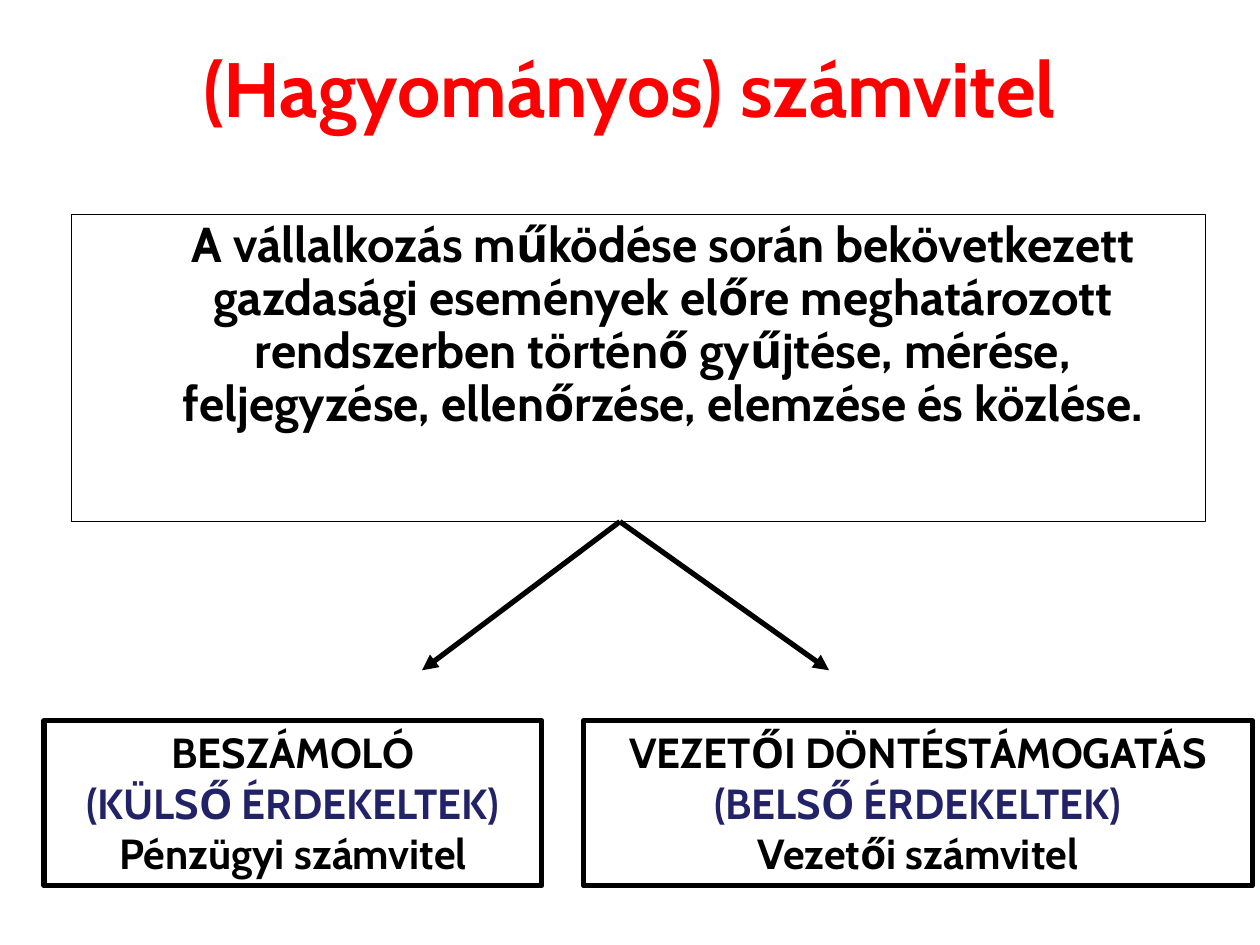
from lxml import etree
from pptx import Presentation
from pptx.dml.color import RGBColor
from pptx.enum.shapes import MSO_CONNECTOR
from pptx.enum.text import MSO_ANCHOR, MSO_AUTO_SIZE, PP_ALIGN
from pptx.oxml.ns import qn
from pptx.util import Inches, Pt

LINE = MSO_CONNECTOR.STRAIGHT
TOP, MIDDLE = MSO_ANCHOR.TOP, MSO_ANCHOR.MIDDLE
FIXED, GROW = MSO_AUTO_SIZE.NONE, MSO_AUTO_SIZE.SHAPE_TO_FIT_TEXT
CENTER = PP_ALIGN.CENTER

BLACK = RGBColor(0, 0, 0)
RED = RGBColor(255, 0, 0)
NAVY = RGBColor(0x22, 0x22, 0x68)


def apply(item, values):
    for name, value in values.items():
        setattr(item, name, value)


def place(shape, box):
    names = ("left", "top", "width", "height")
    apply(shape, dict(zip(names, map(Inches, box))))


def outline(shape, width):
    shape.line.color.rgb = BLACK
    shape.line.width = Pt(width)


def write(para, text, size, color):
    para.alignment = CENTER
    run = para.add_run()
    run.text = text
    apply(run.font, {"name": "Cabin", "size": Pt(size), "bold": True})
    run.font.color.rgb = color


def add_title(slide, box, text):
    title = slide.shapes.title
    place(title, box)
    frame = title.text_frame
    apply(frame, {"vertical_anchor": MIDDLE, "auto_size": FIXED})
    write(frame.paragraphs[0], text, 44, RED)


def add_body(slide, box, text):
    body = slide.placeholders[1]
    place(body, box)
    outline(body, 0.75)
    frame = body.text_frame
    apply(frame, {"vertical_anchor": TOP, "auto_size": FIXED})
    para = frame.paragraphs[0]
    write(para, "\t" + text, 28, BLACK)
    apply(para, {"line_spacing": 0.9, "space_before": Pt(5.6)})
    props = para._p.get_or_add_pPr()
    props.set("marL", str(Inches(0.38)))
    props.set("indent", str(Inches(-0.38)))
    etree.SubElement(props, qn("a:buNone"))


def add_branch(slide, box, lines):
    shape = slide.shapes.add_textbox(*map(Inches, box))
    outline(shape, 3)
    frame = shape.text_frame
    apply(frame, {"word_wrap": False, "auto_size": GROW, "vertical_anchor": TOP})
    for i, (text, color) in enumerate(zip(lines, (BLACK, NAVY, BLACK))):
        para = frame.add_paragraph() if i else frame.paragraphs[0]
        write(para, text, 24, color)


def add_arrow(slide, start, end):
    arrow = slide.shapes.add_connector(LINE, *map(Inches, start + end))
    outline(arrow, 3)
    etree.SubElement(arrow.line._get_or_add_ln(), qn("a:tailEnd"), type="triangle")
    etree.SubElement(arrow._element.spPr, qn("a:effectLst"))


def main():
    deck = Presentation()
    apply(deck, {"slide_width": Inches(10), "slide_height": Inches(7.5)})
    slide = deck.slides.add_slide(deck.slide_layouts[1])
    add_title(slide, (0.5, 0.06, 9, 1.25), "(Hagyományos) számvitel")
    add_body(
        slide,
        (0.57, 1.7, 9, 2.44),
        "A vállalkozás működése során bekövetkezett gazdasági események "
        "előre meghatározott rendszerben történő gyűjtése, mérése, "
        "feljegyzése, ellenőrzése, elemzése és közlése.",
    )
    branches = (
        (0.35, 3.95, 3.35,
         ("BESZÁMOLÓ", "(KÜLSŐ ÉRDEKELTEK)", "Pénzügyi számvitel")),
        (4.63, 5.31, 6.58,
         ("VEZETŐI DÖNTÉSTÁMOGATÁS", "(BELSŐ ÉRDEKELTEK)", "Vezetői számvitel")),
    )
    for left, width, tip, lines in branches:
        add_branch(slide, (left, 5.72, width, 1.31), lines)
        add_arrow(slide, (4.92, 4.14), (tip, 5.32))
    deck.save("out.pptx")


if __name__ == "__main__":
    main()
